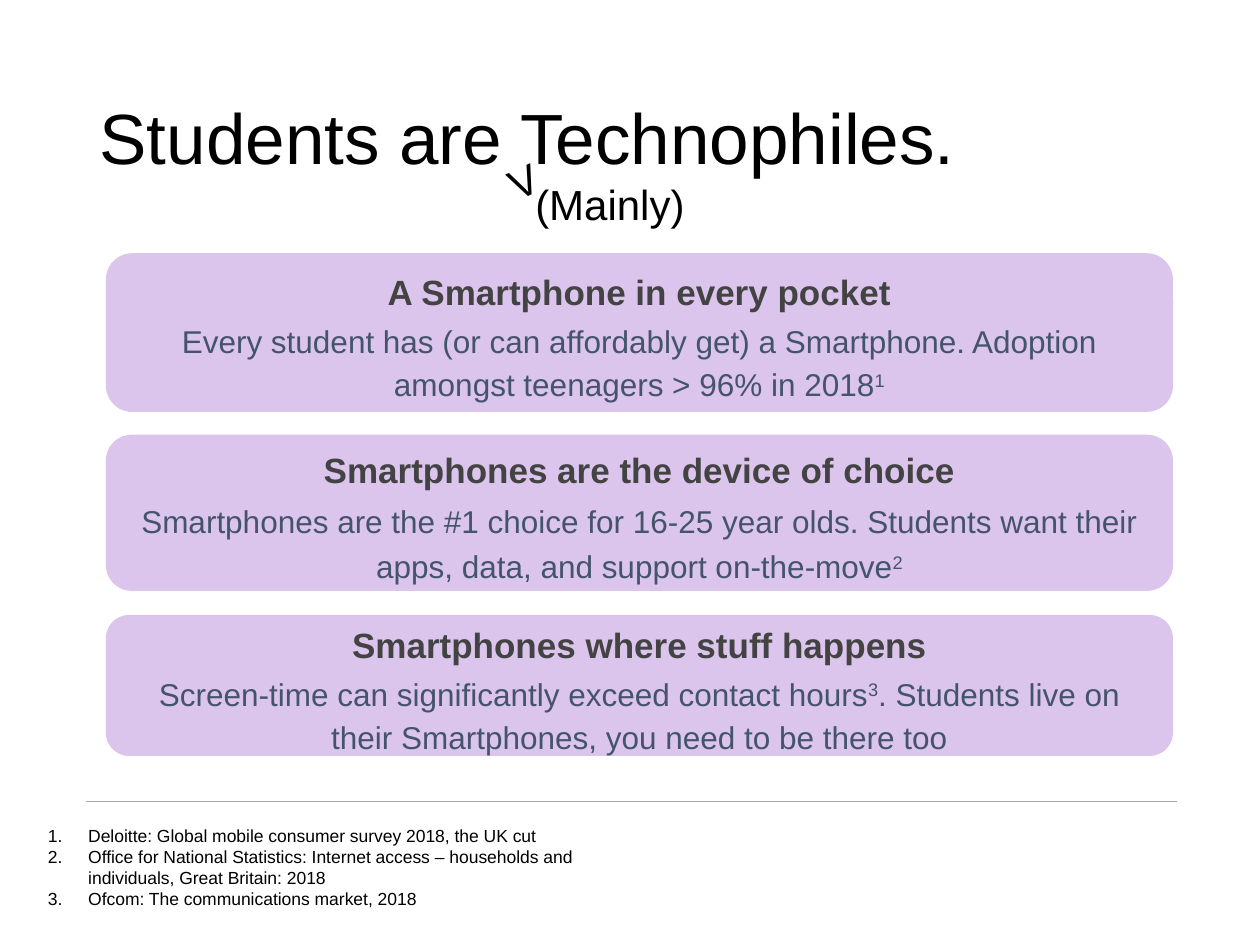
"""Builds the slide on students and their smartphones."""
from lxml import etree
from pptx import Presentation, util as u
from pptx.dml import color
from pptx.enum import shapes, text
from pptx.oxml import ns

COLORS = {"text": "000000", "heading": "434343", "body": "44546A",
          "card": "DCC5ED", "rule": "A6A6A6"}
CARDS = [
    (2.01, 1.26, 1.15, "A Smartphone in every pocket",
     ["Every student has (or can affordably get) a Smartphone. "
      "Adoption amongst teenagers > 96% in 2018", "1"]),
    (3.45, 1.24, 1.2, "Smartphones are the device of choice",
     ["Smartphones are the #1 choice for 16-25 year olds. "
      "Students want their apps, data, and support on-the-move", "2"]),
    (4.88, 1.12, 1.15, "Smartphones where stuff happens",
     ["Screen-time can significantly exceed contact hours", "3",
      ". Students live on their Smartphones, you need to be there too"]),
]
REFERENCES = [
    "Deloitte: Global mobile consumer survey 2018, the UK cut",
    "Office for National Statistics: Internet access – households and "
    "individuals, Great Britain: 2018",
    "Ofcom: The communications market, 2018",
]


def rgb(name):
    """Return the named colour."""
    return color.RGBColor.from_string(COLORS[name])


def add_run(p, words, size=18, fill="text", bold=False, superscript=False):
    """Add formatted text to a paragraph."""
    r = p.add_run()
    r.text = words
    r.font.name = "Arial"
    r.font.size = u.Pt(size)
    r.font.bold = bold
    r.font.color.rgb = rgb(fill)
    if superscript:
        r._r.get_or_add_rPr().set("baseline", "30000")


def place(sp, x, y, w, h):
    """Move and size a shape, in inches."""
    sp.left, sp.top, sp.width, sp.height = map(u.Inches, (x, y, w, h))


def set_insets(tf, inset=0.1):
    """Give a text frame equal margins, in inches."""
    tf.margin_left = tf.margin_right = u.Inches(inset)
    tf.margin_top = tf.margin_bottom = u.Inches(inset)


class SlideBuilder:
    """Holds the style and the current slide."""

    def __init__(self, prs):
        self.s = prs.slides.add_slide(prs.slide_layouts[1])

    def title(self, words, x, y, w, h):
        """Fill the title placeholder."""
        sp = self.s.shapes.title
        place(sp, x, y, w, h)
        tf = sp.text_frame
        tf.auto_size = text.MSO_AUTO_SIZE.NONE
        tf.vertical_anchor = text.MSO_ANCHOR.MIDDLE
        p = tf.paragraphs[0]
        p.alignment = text.PP_ALIGN.LEFT
        p.line_spacing = 0.9
        add_run(p, words, size=40.6)

    def rule(self, x1, x2, y):
        """Draw a thin horizontal line."""
        cx = self.s.shapes.add_connector(
            shapes.MSO_CONNECTOR.STRAIGHT, *map(u.Inches, (x1, y, x2, y)))
        cx.line.color.rgb = rgb("rule")
        cx.line.width = u.Pt(0.5)
        etree.SubElement(cx._element.spPr, ns.qn("a:effectLst"))

    def label(self, words, x, y, w, h, rotation=0):
        """Add a one-line text box."""
        sp = self.s.shapes.add_textbox(*map(u.Inches, (x, y, w, h)))
        sp.rotation = rotation
        tf = sp.text_frame
        tf.word_wrap = False
        tf.auto_size = text.MSO_AUTO_SIZE.SHAPE_TO_FIT_TEXT
        add_run(tf.paragraphs[0], words, size=24)
        return sp

    def card(self, y, h, spacing, heading, parts):
        """Add a rounded card; every second part is a superscript."""
        sp = self.s.shapes.add_shape(
            shapes.MSO_SHAPE.ROUNDED_RECTANGLE,
            *map(u.Inches, (0.84, y, 8.47, h)))
        sp.shadow.inherit = False
        sp.fill.solid()
        sp.fill.fore_color.rgb = rgb("card")
        sp.line.fill.background()
        tf = sp.text_frame
        tf.word_wrap = True
        tf.vertical_anchor = text.MSO_ANCHOR.MIDDLE
        set_insets(tf)
        p = tf.paragraphs[0]
        p.alignment = text.PP_ALIGN.CENTER
        p.line_spacing = 1.2
        add_run(p, heading, size=20, fill="heading", bold=True)
        p = tf.add_paragraph()
        p.alignment = text.PP_ALIGN.CENTER
        p.line_spacing = spacing
        p.space_before = u.Pt(2)
        for i, part in enumerate(parts):
            add_run(p, part, fill="body", superscript=i % 2 == 1)

    def references(self, items, x, y, w, h):
        """Fill the body placeholder with a numbered list."""
        sp = self.s.placeholders[1]
        place(sp, x, y, w, h)
        tf = sp.text_frame
        tf.auto_size = text.MSO_AUTO_SIZE.NONE
        set_insets(tf)
        for i, item in enumerate(items):
            p = tf.add_paragraph() if i else tf.paragraphs[0]
            pPr = p._p.get_or_add_pPr()
            pPr.set("marL", str(u.Inches(0.5)))
            pPr.set("indent", str(u.Inches(-0.32)))
            clr = etree.SubElement(pPr, ns.qn("a:buClr"))
            etree.SubElement(clr, ns.qn("a:srgbClr"), val=COLORS["text"])
            etree.SubElement(pPr, ns.qn("a:buFont"), typeface="Arial")
            etree.SubElement(pPr, ns.qn("a:buAutoNum"), type="arabicPeriod")
            p.space_before = u.Pt(0)
            add_run(p, item, size=10)


def main():
    """Build and save the slide."""
    prs = Presentation()
    prs.slide_width, prs.slide_height = u.Inches(10), u.Inches(7.5)
    b = SlideBuilder(prs)
    b.rule(0.68, 9.34, 6.36)
    b.title("Students are Technophiles.", 0.69, 0.4, 8.62, 1.45)
    caret = b.label("V", 3.94, 1.18, 0.43, 0.5, rotation=335.3)
    mainly = b.label("(Mainly)", 4.15, 1.37, 1.4, 0.5)
    b.s.shapes.add_group_shape([caret, mainly])
    for card in CARDS:
        b.card(*card)
    b.references(REFERENCES, 0.1, 6.45, 5.13, 0.94)
    prs.save("out.pptx")


if __name__ == "__main__":
    main()
